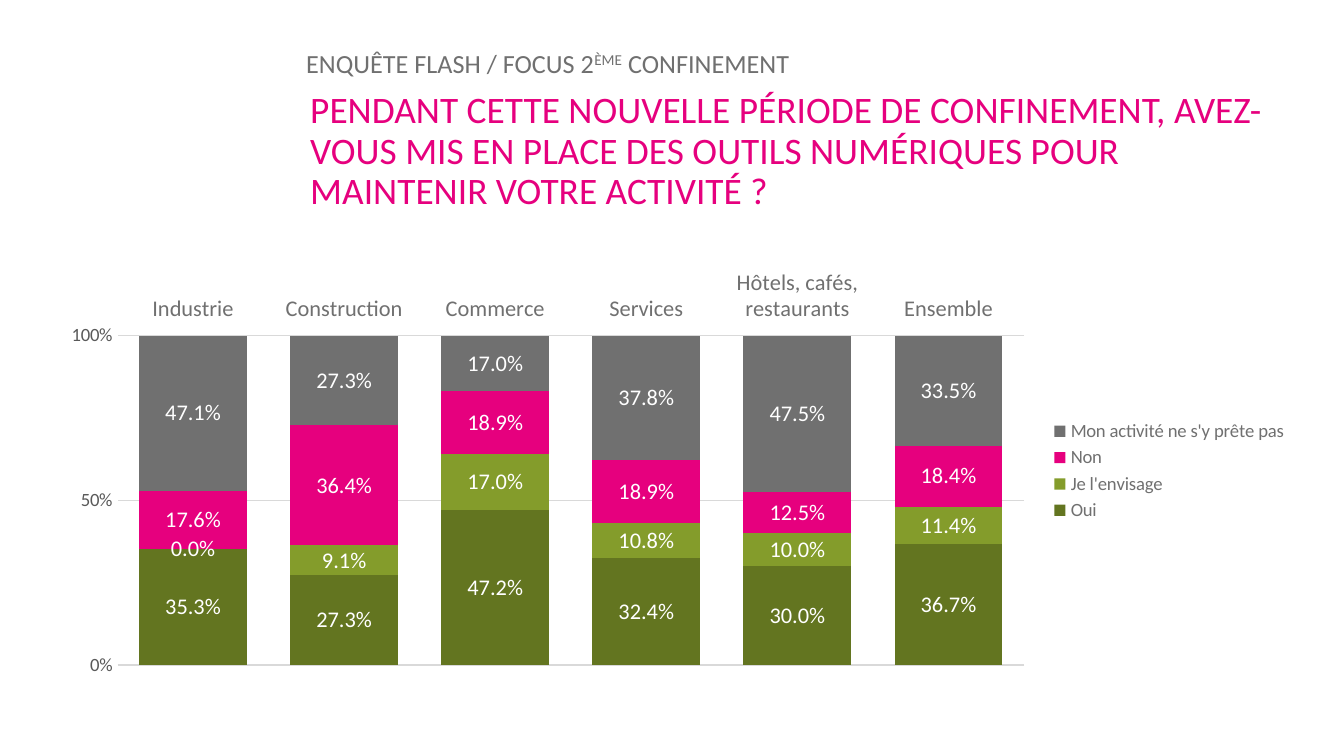
from lxml import etree
from pptx import Presentation
from pptx.chart.data import CategoryChartData as ChartData
from pptx.dml.color import RGBColor
from pptx.enum.chart import XL_CHART_TYPE as Kind, XL_LABEL_POSITION as Spot
from pptx.enum.chart import XL_LEGEND_POSITION as Side, XL_TICK_LABEL_POSITION as Tick
from pptx.enum.chart import XL_TICK_MARK as Mark
from pptx.enum.text import MSO_ANCHOR as Anchor, PP_ALIGN as Align
from pptx.oxml import parse_xml
from pptx.util import Pt

GREY = RGBColor(0x70, 0x70, 0x70)
PINK = RGBColor(0xE6, 0x00, 0x7E)
OLIVE = RGBColor(0x63, 0x75, 0x20)
GREEN = RGBColor(0x84, 0x9C, 0x2B)
DARK = RGBColor(0x59, 0x59, 0x59)
RULE = RGBColor(0xD9, 0xD9, 0xD9)
WHITE = RGBColor(0xFF, 0xFF, 0xFF)
FONT = "Calibri"

TOPIC = [("ENQUÊTE FLASH / FOCUS 2", False), ("ÈME", True), (" CONFINEMENT", False)]
TITLE = ("PENDANT CETTE NOUVELLE PÉRIODE DE CONFINEMENT, AVEZ-VOUS MIS EN PLACE "
         "DES OUTILS NUMÉRIQUES POUR MAINTENIR VOTRE ACTIVITÉ ?")
SECTORS = ["Industrie", "Construction", "Commerce", "Services",
           "Hôtels, cafés, restaurants", "Ensemble"]
ANSWERS = [
    ("Oui", OLIVE, (0.353, 0.273, 0.472, 0.324, 0.3, 0.367)),
    ("Je l'envisage", GREEN, (0, 0.091, 0.17, 0.108, 0.1, 0.114)),
    ("Non", PINK, (0.176, 0.364, 0.189, 0.189, 0.125, 0.184)),
    ("Mon activité ne s'y prête pas", GREY, (0.471, 0.273, 0.17, 0.378, 0.475, 0.335)),
]
PLOT = {"x": 0.06, "y": 0.18, "w": 0.72, "h": 0.78}


def style(font, size, color):
    font.name, font.size, font.bold = FONT, Pt(size), False
    font.color.rgb = color


def rule(line):
    line.color.rgb = RULE
    line.width = Pt(0.75)


def set_frame(frame, anchor, side, edge):
    frame.word_wrap = True
    frame.vertical_anchor = anchor
    frame.margin_left = frame.margin_right = Pt(side)
    frame.margin_top = frame.margin_bottom = Pt(edge)
    para = frame.paragraphs[0]
    para.line_spacing = 0.9
    para.alignment = Align.LEFT
    return para


def set_plot(chart):
    area = chart._chartSpace.chart.plotArea
    space = "http://schemas.openxmlformats.org/drawingml/2006/chart"
    for old in area.findall(f"{{{space}}}layout"):
        area.remove(old)
    modes = "".join(f'<c:{k}Mode val="edge"/>' for k in "xy")
    sizes = "".join(f'<c:{k} val="{v}"/>' for k, v in PLOT.items())
    area.insert(0, parse_xml(
        f'<c:layout xmlns:c="{space}"><c:manualLayout><c:layoutTarget val="inner"/>'
        f'{modes}{sizes}</c:manualLayout></c:layout>'))


deck = Presentation()
deck.slide_width, deck.slide_height = Pt(720), Pt(405)
slide = deck.slides.add_slide(deck.slide_layouts[5])

title = slide.shapes.title
title.left, title.top, title.width, title.height = Pt(159), Pt(45.5), Pt(538.5), Pt(85)
title.text_frame.text = TITLE
para = set_frame(title.text_frame, Anchor.TOP, 7.2, 3.6)
style(para.runs[0].font, 20, PINK)

topic = slide.shapes.add_textbox(Pt(159), Pt(22.5), Pt(538.5), Pt(22.5))
para = set_frame(topic.text_frame, Anchor.BOTTOM, 5, 2.7)
for text, high in TOPIC:
    run = para.add_run()
    run.text = text
    style(run.font, 14, GREY)
    if high:
        run.font._element.set("baseline", "30000")

data = ChartData(number_format="0.0%")
data.categories = SECTORS
for name, color, vals in ANSWERS:
    data.add_series(name, vals)
chart = slide.shapes.add_chart(Kind.COLUMN_STACKED_100, Pt(22.5), Pt(139),
                               Pt(674.5), Pt(226.5), data).chart
chart.font.name, chart.font.size = FONT, Pt(10)
chart.has_title = False
set_plot(chart)

chart.has_legend = True
chart.legend.position = Side.RIGHT
chart.legend.include_in_layout = False
style(chart.legend.font, 10, GREY)

axis = chart.category_axis
axis.tick_label_position = Tick.HIGH
axis.major_tick_mark = axis.minor_tick_mark = Mark.NONE
style(axis.tick_labels.font, 12, GREY)
rule(axis.format.line)

axis = chart.value_axis
axis.minimum_scale, axis.maximum_scale, axis.major_unit = 0, 1, 0.5
axis.major_tick_mark = axis.minor_tick_mark = Mark.NONE
axis.format.line.fill.background()
axis.has_major_gridlines = True
rule(axis.major_gridlines.format.line)
style(axis.tick_labels.font, 10, DARK)
axis.tick_labels.number_format = "0%"
axis.tick_labels.number_format_is_linked = False

plot = chart.plots[0]
plot.gap_width, plot.overlap = 40, 100
plot.vary_by_categories = False
for bars, (name, color, vals) in zip(plot.series, ANSWERS):
    bars.format.fill.solid()
    bars.format.fill.fore_color.rgb = color
    labels = bars.data_labels
    labels.show_value = True
    labels.position = Spot.CENTER
    labels.number_format = "0.0%"
    labels.number_format_is_linked = False
    style(labels.font, 12, WHITE)

deck.save("out.pptx")
